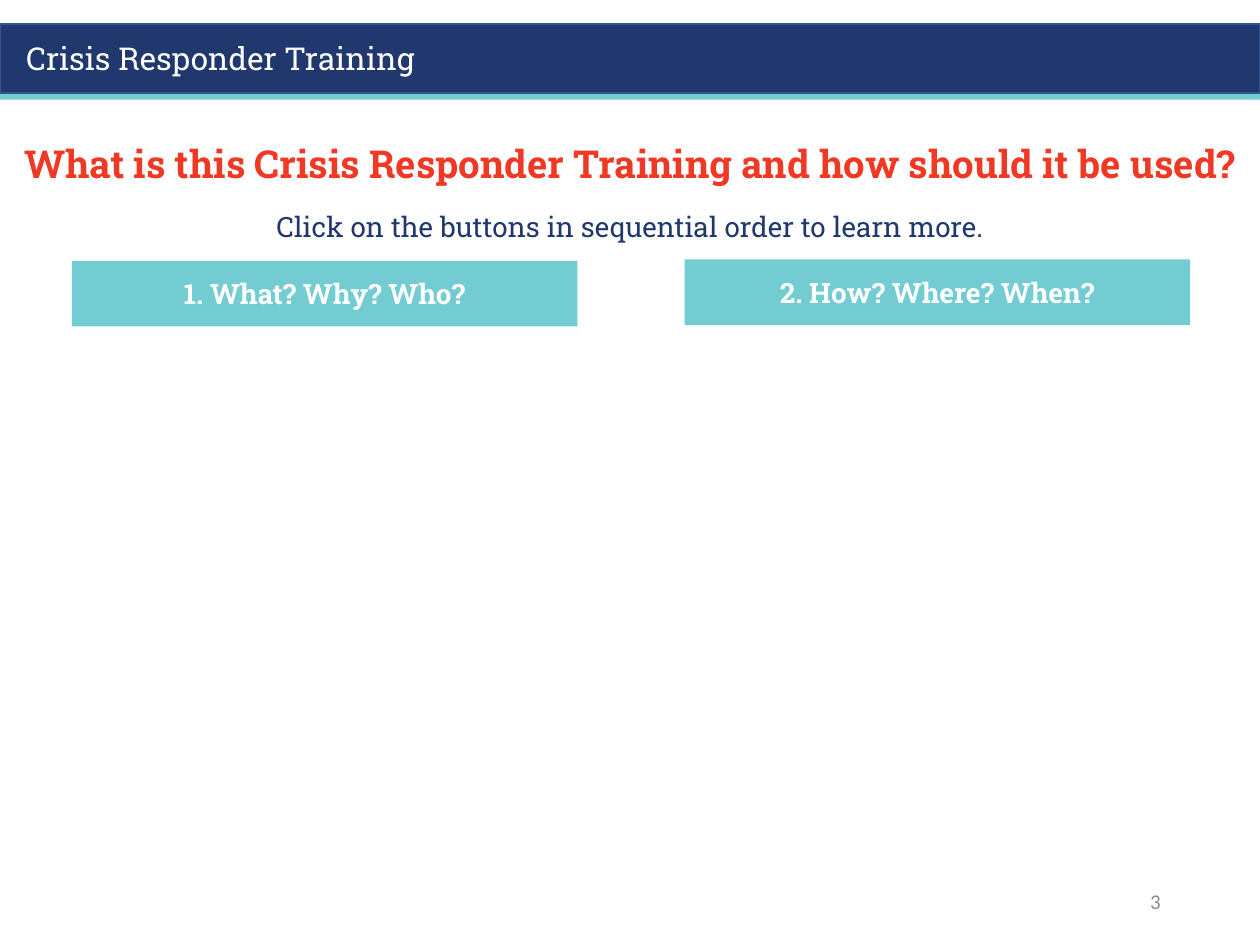
from dataclasses import dataclass

from pptx import Presentation
from pptx.dml.color import RGBColor
from pptx.enum import shapes, text
from pptx.util import Cm, Pt


@dataclass(frozen=True)
class Theme:
    navy: str = "20386D"
    edge: str = "325491"
    teal: str = "72CCD2"
    red: str = "EF3925"
    white: str = "FFFFFF"
    gray: str = "8C8C8C"
    slab: str = "Roboto Slab"
    sans: str = "Calibri"
    title: int = 22
    head: int = 18
    body: int = 16
    foot: int = 12


T = Theme()
MID = text.MSO_ANCHOR.MIDDLE
LEFT, RIGHT, CENTER = text.PP_ALIGN.LEFT, text.PP_ALIGN.RIGHT, text.PP_ALIGN.CENTER

deck = Presentation()
deck.slide_width, deck.slide_height = Cm(25.4), Cm(19.05)
slide = deck.slides.add_slide(deck.slide_layouts[6])


def block(x, y, w, h, fill, edge=None):
    """Add a filled rectangle, with an outline only if edge is given."""
    box = slide.shapes.add_shape(
        shapes.MSO_SHAPE.RECTANGLE, Cm(x), Cm(y), Cm(w), Cm(h))
    box.shadow.inherit = False
    box.fill.solid()
    box.fill.fore_color.rgb = RGBColor.from_string(fill)
    if edge:
        box.line.color.rgb = RGBColor.from_string(edge)
        box.line.width = Pt(1)
    else:
        box.line.fill.background()
    return box


def write(box, lines, align, anchor=MID, **form):
    """Fill a box with (text, size, colour, bold, font) lines."""
    frame = box.text_frame
    frame.word_wrap = True
    frame.vertical_anchor = anchor
    for i, (words, size, color, bold, face) in enumerate(lines):
        par = frame.add_paragraph() if i else frame.paragraphs[0]
        par.alignment = align
        for key, val in form.items():
            if i or key != "space_before":
                setattr(par, key, val)
        run = par.add_run()
        run.text = words
        for key, val in {"size": Pt(size), "bold": bold, "name": face}.items():
            setattr(run.font, key, val)
        run.font.color.rgb = RGBColor.from_string(color)


# Header band
block(0, 1.22, 25.4, 0.79, T.teal)
block(0, 0.48, 25.4, 1.4, T.navy, T.edge)
head = slide.shapes.add_textbox(Cm(0.28), Cm(0.66), Cm(9.4), Cm(1.02))
write(head, [("Crisis Responder Training", T.head, T.white, False, T.slab)],
      LEFT, text.MSO_ANCHOR.TOP)

# Page number
page = slide.shapes.add_textbox(Cm(17.93), Cm(17.65), Cm(5.72), Cm(1.02))
write(page, [("3", T.foot, T.gray, False, T.sans)], RIGHT)

# Title and prompt
title = slide.shapes.add_textbox(0, Cm(2.59), Cm(25.4), Cm(2.67))
write(title, [
    ("What is this Crisis Responder Training and how should it be used?",
     T.title, T.red, True, T.slab),
    ("Click on the buttons in sequential order to learn more.",
     T.body, T.navy, False, T.slab),
], CENTER, line_spacing=0.9, space_before=Pt(15))

# Buttons
for x, y, label in [(1.45, 5.26, "1. What? Why? Who?"),
                    (13.8, 5.23, "2. How? Where? When?")]:
    button = block(x, y, 10.19, 1.32, T.teal)
    write(button, [(label, T.body, T.white, True, T.slab)], CENTER)

deck.save("out.pptx")
